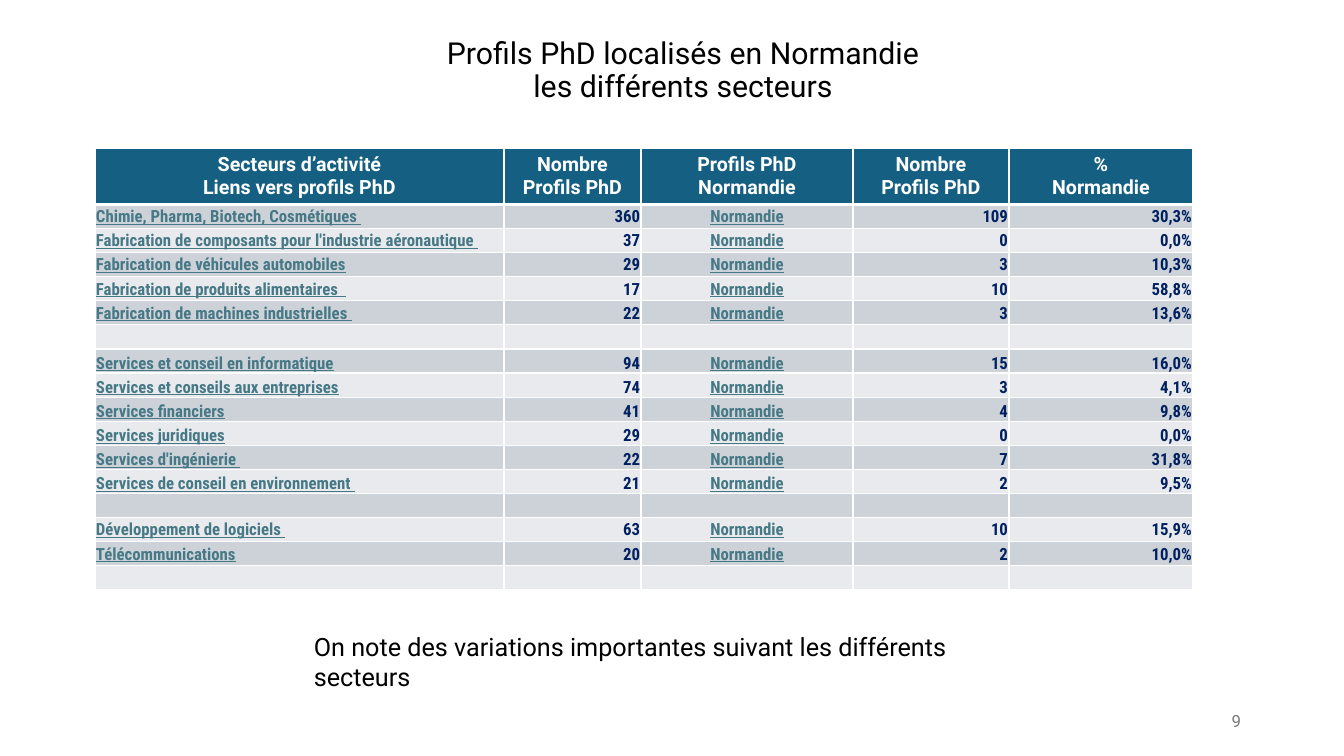
from lxml import etree
from pptx import Presentation
from pptx import util as u
from pptx.dml.color import RGBColor
from pptx.enum import text
from pptx.oxml.ns import qn

TITLE = "Profils PhD localisés en Normandie\vles différents secteurs"
NOTE = "On note des variations importantes suivant les différents secteurs"
PAGE_NUMBER = "9"
HEADERS = [
    "Secteurs d’activité\nLiens vers profils PhD",
    "Nombre\nProfils PhD",
    "Profils PhD\nNormandie",
    "Nombre\nProfils PhD",
    "%\nNormandie",
]
REGION = "Normandie"
BLANK = ()
# Sector, national count, regional count, regional share
SECTORS = [
    ("Chimie, Pharma, Biotech, Cosmétiques ", "360", "109", "30,3%"),
    ("Fabrication de composants pour l'industrie aéronautique ", "37", "0", "0,0%"),
    ("Fabrication de véhicules automobiles", "29", "3", "10,3%"),
    ("Fabrication de produits alimentaires  ", "17", "10", "58,8%"),
    ("Fabrication de machines industrielles ", "22", "3", "13,6%"),
    BLANK,
    ("Services et conseil en informatique", "94", "15", "16,0%"),
    ("Services et conseils aux entreprises", "74", "3", "4,1%"),
    ("Services financiers", "41", "4", "9,8%"),
    ("Services juridiques", "29", "0", "0,0%"),
    ("Services d'ingénierie ", "22", "7", "31,8%"),
    ("Services de conseil en environnement ", "21", "2", "9,5%"),
    BLANK,
    ("Développement de logiciels ", "63", "10", "15,9%"),
    ("Télécommunications", "20", "2", "10,0%"),
    BLANK,
]
SERVICE_ROWS = range(7, 13)

COLUMN_WIDTHS = [409, 137, 212, 156, 184]
TABLE_LEFT, TABLE_TOP = 95, 148
HEADER_HEIGHT, BODY_HEIGHT = 56, 386
LINK_COLUMNS = (0, 2)
BANDS = ("CCD2D8", "E8EAED")
HEADER_FILL, WHITE, BLACK = "156082", "FFFFFF", "000000"
LINK, NAVY, GREY = "467886", "002060", "797979"

LEFT, CENTER, RIGHT = (text.PP_ALIGN.LEFT, text.PP_ALIGN.CENTER, text.PP_ALIGN.RIGHT)
ALIGNMENTS = [LEFT, RIGHT, CENTER, RIGHT, RIGHT]
MIDDLE, BOTTOM = text.MSO_ANCHOR.MIDDLE, text.MSO_ANCHOR.BOTTOM


def px(length):
    return u.Emu(round(length * 12192000 / 1344))


def rgb(color):
    return RGBColor.from_string(color)


def style(frame, size, color, align, face="Roboto", bold=False, underline=False):
    for para in frame.paragraphs:
        para.alignment = align
        font = para.font
        font.name, font.size = face, u.Pt(size)
        font.bold, font.underline = bold, underline
        font.color.rgb = rgb(color)


def paint(cell, fill, top=1, bottom=1):
    """Set the fill and the white borders, with top and bottom widths in points."""
    properties = cell._tc.get_or_add_tcPr()
    for side, width in (("L", 1), ("R", 1), ("T", top), ("B", bottom)):
        line = etree.SubElement(properties, qn(f"a:ln{side}"), w=str(u.Pt(width)))
        solid = etree.SubElement(line, qn("a:solidFill"))
        etree.SubElement(solid, qn("a:srgbClr"), val=WHITE)
    cell.fill.solid()
    cell.fill.fore_color.rgb = rgb(fill)


def add_text(page, words, left, top, width, height):
    box = page.shapes.add_textbox(px(left), px(top), px(width), px(height))
    frame = box.text_frame
    frame.word_wrap = True
    frame.text = words
    return frame


def add_title(page):
    title = page.shapes.title
    title.left, title.top, title.width, title.height = map(px, (114, 13, 1138, 117))
    frame = title.text_frame
    frame.text = TITLE
    frame.auto_size = text.MSO_AUTO_SIZE.NONE
    frame.vertical_anchor = MIDDLE
    style(frame, 21.6, BLACK, CENTER)
    frame.paragraphs[0].line_spacing = 0.9


def fill_body_cell(cell, words, row, column):
    cell.margin_left = cell.margin_right = cell.margin_top = px(1)
    cell.margin_bottom = 0
    cell.vertical_anchor = BOTTOM if row in SERVICE_ROWS else MIDDLE
    paint(cell, BANDS[(row - 1) % 2], top=3 if row == 1 else 1)
    cell.text = words
    is_link = column in LINK_COLUMNS
    style(cell.text_frame, 12, LINK if is_link else NAVY, ALIGNMENTS[column],
          "Roboto Condensed", bold=True, underline=is_link)
    if not words:
        para = cell.text_frame.paragraphs[0]
        etree.SubElement(para._p, qn("a:endParaRPr"), sz="1200")


def add_sector_table(page):
    frame = page.shapes.add_table(
        len(SECTORS) + 1, len(HEADERS), px(TABLE_LEFT), px(TABLE_TOP),
        px(sum(COLUMN_WIDTHS)), px(HEADER_HEIGHT + BODY_HEIGHT))
    table = frame.table
    for column, width in zip(table.columns, COLUMN_WIDTHS):
        column.width = px(width)
    for row in table.rows:
        row.height = px(BODY_HEIGHT / len(SECTORS))
    table.rows[0].height = px(HEADER_HEIGHT)

    for column, words in enumerate(HEADERS):
        cell = table.cell(0, column)
        paint(cell, HEADER_FILL, bottom=3)
        cell.text = words
        style(cell.text_frame, 14, WHITE, CENTER, bold=True)
    for row, sector in enumerate(SECTORS, 1):
        values = (*sector[:2], REGION, *sector[2:]) if sector else [""] * len(HEADERS)
        for column, words in enumerate(values):
            fill_body_cell(table.cell(row, column), words, row, column)


def main():
    deck = Presentation()
    deck.slide_width, deck.slide_height = px(1344), px(756)
    page = deck.slides.add_slide(deck.slide_layouts[5])
    add_title(page)
    add_sector_table(page)
    number = add_text(page, PAGE_NUMBER, 949, 701, 302, 40)
    number.vertical_anchor = MIDDLE
    style(number, 12, GREY, RIGHT)
    note = add_text(page, NOTE, 304, 626, 736, 40)
    style(note, 18, BLACK, LEFT)
    deck.save("out.pptx")


if __name__ == "__main__":
    main()
